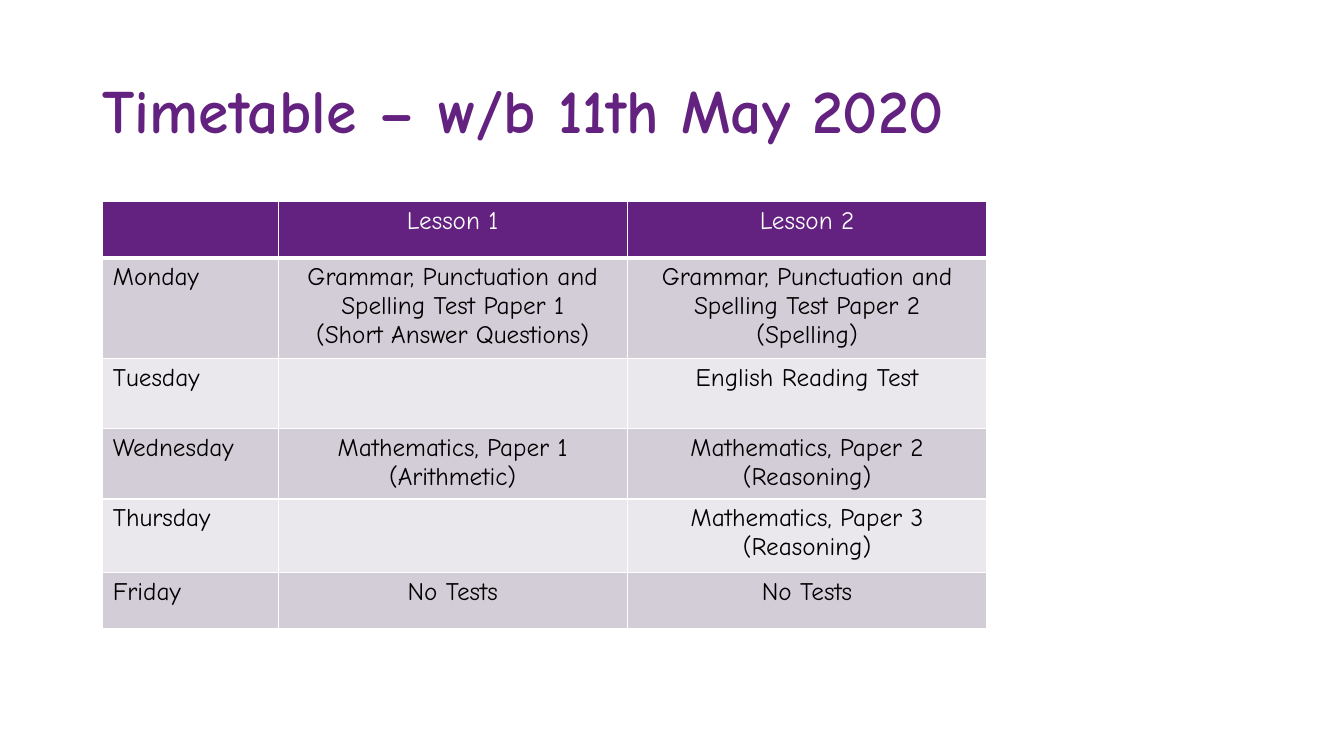
"""Build the weekly test timetable slide."""
from lxml.etree import SubElement
from pptx import Presentation
from pptx.dml.color import RGBColor
from pptx.enum.text import MSO_ANCHOR, PP_ALIGN
from pptx.oxml.ns import qn
from pptx.util import Inches, Pt

FONT = "Comic Neue"
PURPLE, WHITE, BLACK = "63227F", "FFFFFF", "000000"
BANDS = ["D3CDD8", "EAE8EC"]
TITLE = "Timetable – w/b 11th May 2020"
GRAMMAR = "Grammar, Punctuation and Spelling Test Paper"
ROWS = [
    ("", "Lesson 1", "Lesson 2"),
    ("Monday", f"{GRAMMAR} 1\n(Short Answer Questions)", f"{GRAMMAR} 2\n(Spelling)"),
    ("Tuesday", "", "English Reading Test"),
    ("Wednesday", "Mathematics, Paper 1 (Arithmetic)", "Mathematics, Paper 2 (Reasoning)"),
    ("Thursday", "", "Mathematics, Paper 3 (Reasoning)"),
    ("Friday", "No Tests", "No Tests"),
]
COLS = [1.74, 3.46, 3.57]
HEIGHTS = [0.56, 0.97, 0.69, 0.68, 0.73, 0.56]


def rgb(value):
    return RGBColor.from_string(value)


def write(tf, text, size=18, color=BLACK, bold=False, align=PP_ALIGN.LEFT, spacing=None):
    for i, line in enumerate(text.split("\n")):
        p = tf.add_paragraph() if i else tf.paragraphs[0]
        p.alignment = align
        p.line_spacing = spacing
        p.font.size = Pt(size)
        if line:
            r = p.add_run()
            r.text = line
            r.font.name, r.font.size, r.font.bold = FONT, Pt(size), bold
            r.font.color.rgb = rgb(color)


def border(cell, bottom):
    tc_pr = cell._tc.get_or_add_tcPr()
    for side, width in (("L", 1), ("R", 1), ("T", 1), ("B", bottom)):
        ln = SubElement(tc_pr, qn(f"a:ln{side}"), w=str(Pt(width)))
        fill = SubElement(ln, qn("a:solidFill"))
        SubElement(fill, qn("a:srgbClr"), val=WHITE)


def add_timetable(s):
    frame = s.shapes.add_table(len(ROWS), len(COLS), Inches(1.02), Inches(2),
                               Inches(sum(COLS)), Inches(sum(HEIGHTS)))
    table = frame.table
    for column, width in zip(table.columns, COLS):
        column.width = Inches(width)
    for i, (row, height) in enumerate(zip(ROWS, HEIGHTS)):
        table.rows[i].height = Inches(height)
        for j, text in enumerate(row):
            cell = table.cell(i, j)
            border(cell, bottom=1 if i else 3)
            cell.fill.solid()
            cell.fill.fore_color.rgb = rgb(BANDS[(i - 1) % 2] if i else PURPLE)
            write(cell.text_frame, text, color=BLACK if i else WHITE,
                  align=PP_ALIGN.CENTER if j else PP_ALIGN.LEFT)


def main():
    prs = Presentation()
    prs.slide_width, prs.slide_height = Inches(13.33), Inches(7.5)
    s = prs.slides.add_slide(prs.slide_layouts[6])
    tf = s.shapes.add_textbox(Inches(0.92), Inches(0.4), Inches(8.99), Inches(1.45)).text_frame
    tf.word_wrap = True
    tf.vertical_anchor = MSO_ANCHOR.MIDDLE
    write(tf, TITLE, size=44, color=PURPLE, bold=True, spacing=0.9)
    add_timetable(s)
    prs.save("out.pptx")


if __name__ == "__main__":
    main()
